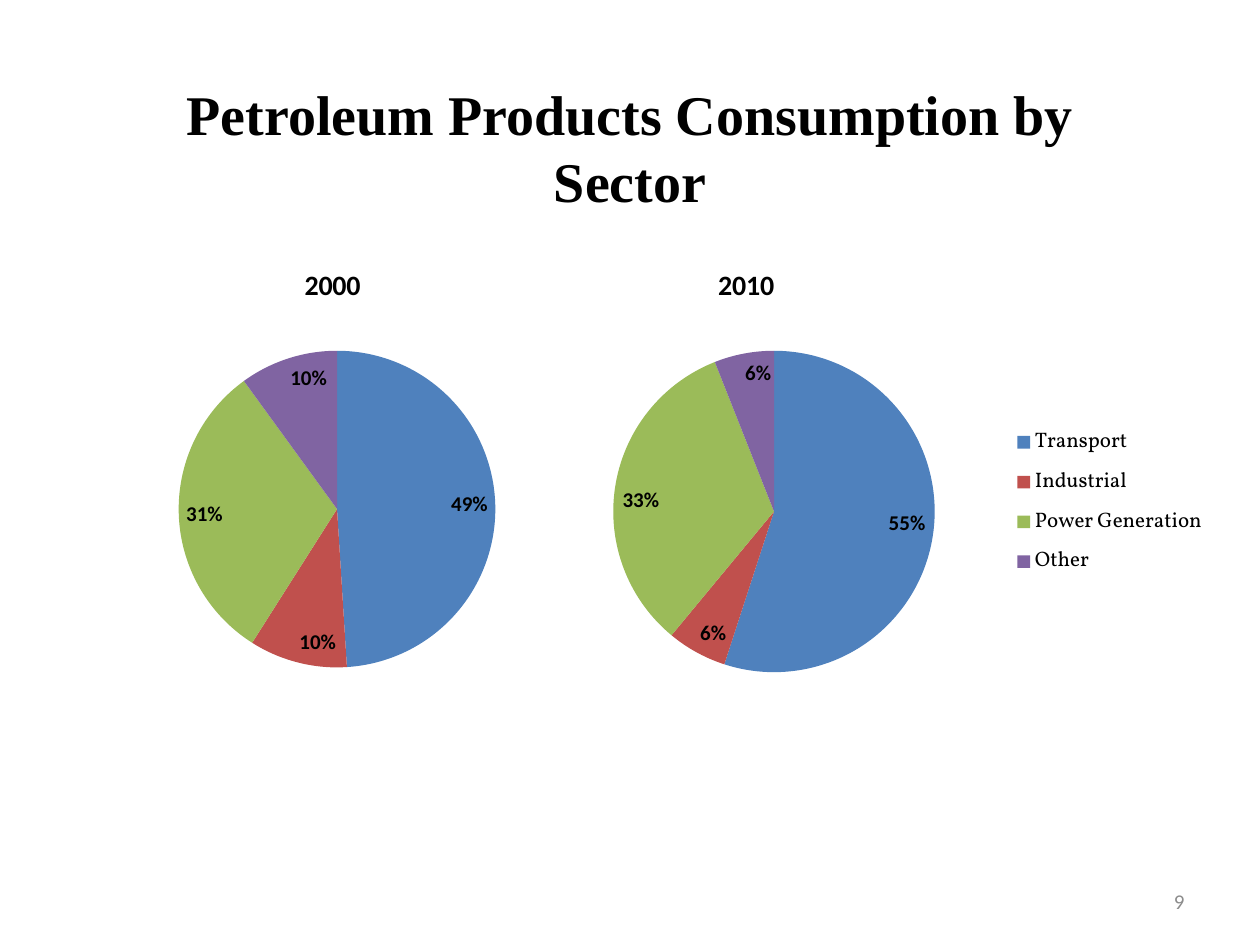
from lxml import etree
from pptx import Presentation
from pptx.chart.data import CategoryChartData
from pptx.dml.color import RGBColor
from pptx.enum import chart as ch, text as tx
from pptx.oxml.ns import qn
from pptx.util import Cm, Pt

BLACK = RGBColor(0, 0, 0)
GREY = RGBColor(0x8C, 0x8C, 0x8C)
SECTOR_COLOURS = [
    RGBColor(0x4F, 0x81, 0xBD),
    RGBColor(0xC0, 0x50, 0x4D),
    RGBColor(0x9B, 0xBB, 0x59),
    RGBColor(0x80, 0x64, 0xA2),
]
SECTORS = ["Transport", "Industrial", "Power Generation", "Other"]


def style(font, size, name, colour=BLACK, bold=False):
    """Set the face, size, colour and weight of a font."""
    font.size, font.name, font.bold = Pt(size), name, bold
    font.color.rgb = colour


def place(element, x, y, w=None, h=None, inner=False):
    """Give a chart part a manual layout in fractions of the chart."""
    for old in element.findall(qn("c:layout")):
        element.remove(old)
    layout = etree.Element(qn("c:layout"))
    manual = etree.SubElement(layout, qn("c:manualLayout"))
    settings = [("layoutTarget", "inner")] if inner else []
    settings += [("xMode", "edge"), ("yMode", "edge"), ("x", x), ("y", y)]
    if w is not None:
        settings += [("w", w), ("h", h)]
    for tag, value in settings:
        etree.SubElement(manual, qn(f"c:{tag}")).set("val", str(value))
    before = {qn("c:title"): "c:tx", qn("c:legend"): "c:legendPos"}.get(element.tag)
    index = 0 if before is None else element.index(element.find(qn(before))) + 1
    element.insert(index, layout)


def add_text(slide, box, words, size, face, align, anchor, colour=BLACK, bold=False):
    """Write one wrapped paragraph in the given box."""
    frame = slide.shapes.add_textbox(*map(Cm, box)).text_frame
    frame.word_wrap = True
    frame.vertical_anchor = anchor
    frame.text = words
    paragraph = frame.paragraphs[0]
    paragraph.alignment = align
    style(paragraph.runs[0].font, size, face, colour, bold)


def add_year_pie(slide, box, year, categories, shares, pie_area, title_at, legend_area=None):
    """Draw the sector shares of one year as a pie in the given box."""
    data = CategoryChartData()
    data.categories = categories
    data.add_series("Series 1", shares)
    pie = slide.shapes.add_chart(ch.XL_CHART_TYPE.PIE, *map(Cm, box), data).chart
    style(pie.font, 10, "Calibri")

    pie.has_title = True
    heading = pie.chart_title.text_frame
    heading.text = f" {year} "
    style(heading.paragraphs[0].runs[0].font, 16, "Calibri", bold=True)
    pie.chart_title.include_in_layout = False
    place(pie.chart_title._element, *title_at)

    plot = pie.plots[0]
    plot.vary_by_categories = True
    place(pie._chartSpace.chart.plotArea, *pie_area, inner=True)
    for index, colour in enumerate(SECTOR_COLOURS):
        fill = plot.series[0].points[index].format.fill
        fill.solid()
        fill.fore_color.rgb = colour

    plot.has_data_labels = True
    labels = plot.data_labels
    labels.show_percentage, labels.show_value = True, False
    labels.number_format, labels.number_format_is_linked = "0%", False
    labels.position = ch.XL_LABEL_POSITION.INSIDE_END
    style(labels.font, 12, "Calibri", bold=True)

    pie.has_legend = legend_area is not None
    if legend_area:
        pie.legend.position = ch.XL_LEGEND_POSITION.RIGHT
        pie.legend.include_in_layout = False
        style(pie.legend.font, 12, "Vollkorn")
        place(pie.legend._element, *legend_area)


def main():
    """Build the slide and save it."""
    deck = Presentation()
    deck.slide_width, deck.slide_height = Cm(25.4), Cm(19.05)
    slide = deck.slides.add_slide(deck.slide_layouts[6])
    add_year_pie(slide, (1.27, 4.88, 11.05, 9.53), 2000, ["1", "2", "3", "4"],
                 (49, 10, 31, 10), (0.21, 0.23, 0.58, 0.67), (0.42, 0.04))
    add_year_pie(slide, (11, 4.88, 13.54, 9.53), 2010, SECTORS,
                 (55, 6, 33, 6), (0.1, 0.23, 0.48, 0.68), (0.24, 0.04),
                 (0.69, 0.37, 0.3, 0.36))
    add_text(slide, (3.18, 1.47, 19.05, 3), "Petroleum Products Consumption by Sector",
             32, "Times New Roman", tx.PP_ALIGN.CENTER, tx.MSO_ANCHOR.TOP, bold=True)
    add_text(slide, (18.2, 17.65, 5.93, 1.02), "9", 12, "Calibri",
             tx.PP_ALIGN.RIGHT, tx.MSO_ANCHOR.MIDDLE, GREY)
    deck.save("out.pptx")


if __name__ == "__main__":
    main()
